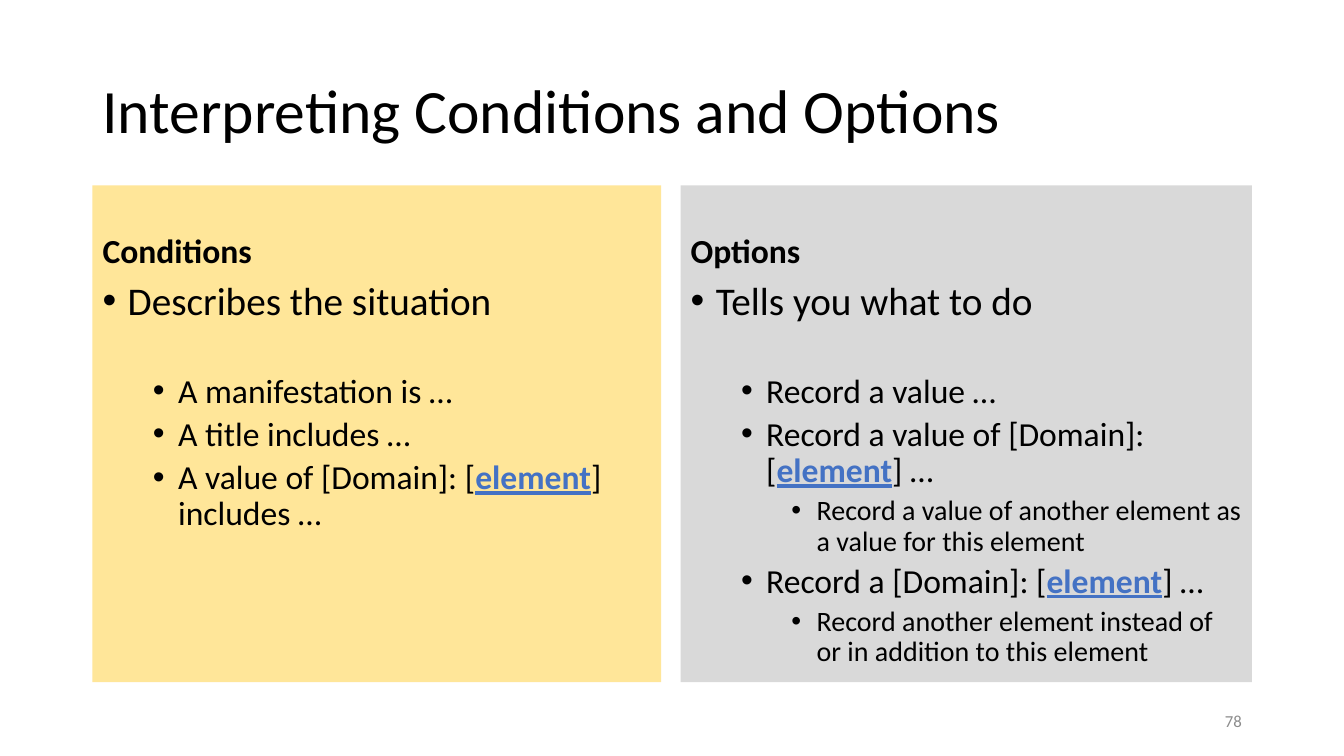
from lxml import etree
from pptx import Presentation
from pptx.dml.color import RGBColor
from pptx.enum import text
from pptx.oxml.ns import qn
from pptx.util import Cm, Pt

FONT = "Calibri"
BLACK, LINK, GREY = "000000", "4472C4", "8C8C8C"
LEFT, HEAD_TOP, HEAD_HEIGHT, LIST_HEIGHT = 2.33, 4.67, 2.29, 10.23
SIZES = (28, 24, 20)  # text size for each list level
SPACE_BEFORE = (10, 5, 5)
GROUP_GAP = 36  # space between the lead line and its examples

# Heading, left, width, fill, list of (level, text); *...* marks a linked term
COLUMNS = [
    ("Conditions", LEFT, 14.33, "FFE699", [
        (0, "Describes the situation"),
        (1, "A manifestation is …"),
        (1, "A title includes …"),
        (1, "A value of [Domain]: [*element*] includes …"),
    ]),
    ("Options", 17.15, 14.4, "D9D9D9", [
        (0, "Tells you what to do"),
        (1, "Record a value …"),
        (1, "Record a value of [Domain]: [*element*] …"),
        (2, "Record a value of another element as a value for this element"),
        (1, "Record a [Domain]: [*element*] …"),
        (2, "Record another element instead of or in addition to this element"),
    ]),
]


def colour(value):
    return RGBColor.from_string(value)


def place(box, left, top, width, height, fill=None, anchor=text.MSO_ANCHOR.TOP):
    box.left, box.top, box.width, box.height = map(Cm, (left, top, width, height))
    if fill:
        box.fill.solid()
        box.fill.fore_color.rgb = colour(fill)
    frame = box.text_frame
    frame.word_wrap = True
    frame.auto_size = text.MSO_AUTO_SIZE.NONE
    frame.vertical_anchor = anchor
    return frame


def write(para, content, size, color=BLACK, bold=False, before=0,
          line=0.9, align=text.PP_ALIGN.LEFT):
    para.alignment, para.line_spacing = align, line
    para.space_before = Pt(before)
    for number, part in enumerate(content.split("*")):
        linked = number % 2 == 1
        span = para.add_run()
        span.text = part
        font = span.font
        font.name, font.size = FONT, Pt(size)
        font.bold, font.underline = bold or linked, linked
        font.color.rgb = colour(LINK if linked else color)


def add_bullet(para, level):
    para.level = level
    props = para._p.get_or_add_pPr()
    props.set("marL", str(Cm(0.635 + 1.27 * level)))
    props.set("indent", str(-Cm(0.635)))
    etree.SubElement(props, qn("a:buFont"), typeface="Arial")
    etree.SubElement(props, qn("a:buChar"), char="•")


def fill_list(frame, items):
    previous = None
    for level, content in items:
        para = frame.paragraphs[0] if previous is None else frame.add_paragraph()
        before = GROUP_GAP if previous == 0 else SPACE_BEFORE[level]
        write(para, content, SIZES[level], before=before)
        add_bullet(para, level)
        previous = level


def add_column(head, body, heading, left, width, fill, items):
    frame = place(head, left, HEAD_TOP, width, HEAD_HEIGHT, fill,
                  text.MSO_ANCHOR.BOTTOM)
    write(frame.paragraphs[0], heading, 24, bold=True, before=10)
    frame = place(body, left, HEAD_TOP + HEAD_HEIGHT, width, LIST_HEIGHT, fill)
    fill_list(frame, items)


def main():
    deck = Presentation()
    deck.slide_width, deck.slide_height = Cm(33.87), Cm(19.05)
    page = deck.slides.add_slide(deck.slide_layouts.get_by_name("Comparison"))

    # Title
    frame = place(page.shapes.title, LEFT, 1.02, 29.21, 3.68,
                  anchor=text.MSO_ANCHOR.MIDDLE)
    write(frame.paragraphs[0], "Interpreting Conditions and Options", 44)

    # Two columns, each a heading over a list
    boxes = page.placeholders
    for number, column in enumerate(COLUMNS):
        add_column(boxes[1 + 2 * number], boxes[2 + 2 * number], *column)

    # Page number
    box = page.shapes.add_textbox(0, 0, 0, 0)
    frame = place(box, 23.93, 17.65, 7.62, 1.02, anchor=text.MSO_ANCHOR.MIDDLE)
    write(frame.paragraphs[0], "78", 12, color=GREY, line=1.0,
          align=text.PP_ALIGN.RIGHT)

    deck.save("out.pptx")


if __name__ == "__main__":
    main()
